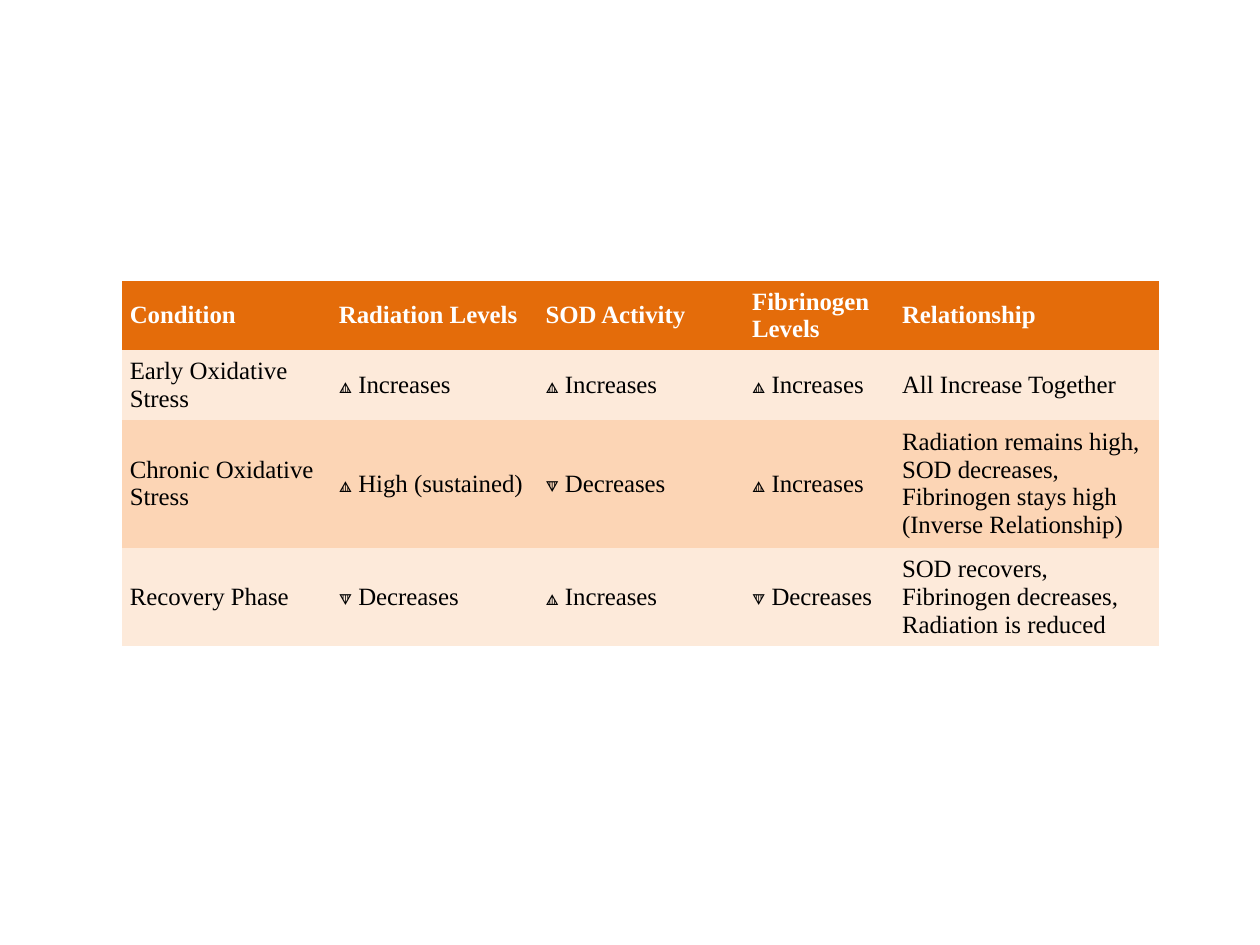
from dataclasses import dataclass

from pptx import Presentation
from pptx.dml.color import RGBColor
from pptx.enum.text import MSO_ANCHOR as Anchor
from pptx.oxml.ns import qn
from pptx.util import Inches, Pt


@dataclass(frozen=True)
class Theme:
    """Colours, type and cell spacing."""

    font: str = "Times New Roman"
    size: float = 14.2
    header_fill: str = "E46C0A"
    header_text: str = "FFFFFF"
    body_text: str = "000000"
    bands: tuple = ("FDEADA", "FCD5B5")
    side_margin: float = 0.06
    edge_margin: float = 0.03
    plain_table_style: str = "{2D5ABB26-0587-4C30-8999-92F81FD0307C}"


class SlideBuilder:
    """Draws styled elements on the current slide."""

    def __init__(self, slide, theme):
        self.slide = slide
        self.theme = theme

    def add_table(self, left, top, widths, heights, rows):
        """Add a table with a header row and banded body rows."""
        shape = self.slide.shapes.add_table(
            len(heights), len(widths), Inches(left), Inches(top),
            Inches(sum(widths)), Inches(sum(heights)))
        table = shape.table
        table._tbl.tblPr.find(qn("a:tableStyleId")).text = self.theme.plain_table_style
        for column, width in zip(table.columns, widths):
            column.width = Inches(width)
        for row, height in zip(table.rows, heights):
            row.height = Inches(height)
        for row_index, texts in enumerate(rows):
            for column_index, text in enumerate(texts):
                self.format_cell(table.cell(row_index, column_index), text, row_index)

    def format_cell(self, cell, text, row_index):
        """Write and style one table cell."""
        theme = self.theme
        header = row_index == 0
        fill = theme.header_fill if header else theme.bands[(row_index - 1) % 2]
        cell_format = {
            "text": text,
            "vertical_anchor": Anchor.MIDDLE,
            "margin_left": Inches(theme.side_margin),
            "margin_right": Inches(theme.side_margin),
            "margin_top": Inches(theme.edge_margin),
            "margin_bottom": Inches(theme.edge_margin),
        }
        for name, value in cell_format.items():
            setattr(cell, name, value)
        cell.fill.solid()
        cell.fill.fore_color.rgb = RGBColor.from_string(fill)
        font = cell.text_frame.paragraphs[0].runs[0].font
        font_format = {"name": theme.font, "size": Pt(theme.size), "bold": header}
        for name, value in font_format.items():
            setattr(font, name, value)
        font.color.rgb = RGBColor.from_string(
            theme.header_text if header else theme.body_text)


def main():
    """Build the oxidative stress table slide."""
    presentation = Presentation()
    presentation.slide_width = Inches(10)
    presentation.slide_height = Inches(7.5)
    slide = presentation.slides.add_slide(presentation.slide_layouts.get_by_name("Blank"))
    increases, decreases = "🔼 Increases", "🔽 Decreases"
    rows = [
        ("Condition", "Radiation Levels", "SOD Activity", "Fibrinogen Levels",
         "Relationship"),
        ("Early Oxidative Stress", increases, increases, increases,
         "All Increase Together"),
        ("Chronic Oxidative Stress", "🔼 High (sustained)", decreases, increases,
         "Radiation remains high, SOD decreases, Fibrinogen stays high "
         "(Inverse Relationship)"),
        ("Recovery Phase", decreases, increases, decreases,
         "SOD recovers, Fibrinogen decreases, Radiation is reduced"),
    ]
    SlideBuilder(slide, Theme()).add_table(
        0.97, 2.23, widths=(1.66, 1.64, 1.64, 1.19, 2.1),
        heights=(0.55, 0.55, 1.02, 0.78), rows=rows)
    presentation.save("out.pptx")


if __name__ == "__main__":
    main()
